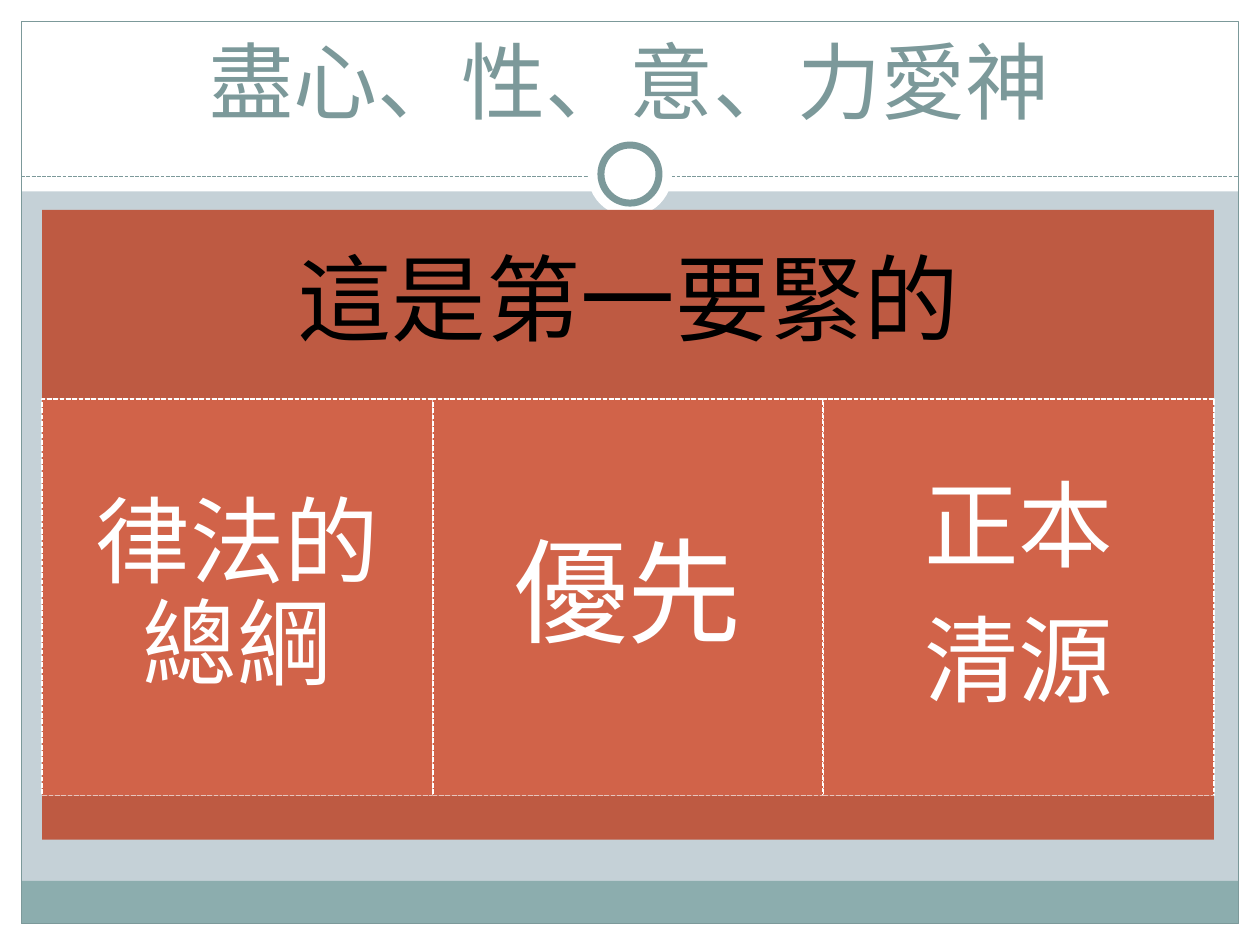
from pptx import Presentation
from pptx.dml.color import RGBColor
from pptx.enum.dml import MSO_LINE
from pptx.enum.shapes import MSO_CONNECTOR, MSO_SHAPE
from pptx.enum.text import MSO_ANCHOR, PP_ALIGN
from pptx.oxml.ns import qn
from pptx.util import Cm, Pt
from lxml.etree import SubElement

WHITE = RGBColor(0xFF, 0xFF, 0xFF)
BLACK = RGBColor(0x00, 0x00, 0x00)
MIST = RGBColor(0xC5, 0xD1, 0xD7)
TEAL = RGBColor(0x8C, 0xAD, 0xAE)
SLATE = RGBColor(0x7C, 0x99, 0x9A)
RUST = RGBColor(0xBE, 0x5A, 0x42)
CORAL = RGBColor(0xD1, 0x63, 0x49)

FONT = "Roboto"
WIDTH, HEIGHT = 25.4, 19.05
MARGIN = 0.43
COLUMNS = [(["律法的總綱"], 54), (["優先"], 65), (["正本", "清源"], 54)]


def set_line(line, color, width, dash=None):
    """Style an outline or connector line."""
    line.color.rgb = color
    line.width = Pt(width)
    if dash:
        line.dash_style = dash


def add_block(page, box, fill=None, kind=MSO_SHAPE.RECTANGLE, outline=None):
    """Add a preset shape with an optional fill and outline."""
    block = page.shapes.add_shape(kind, *map(Cm, box))
    block.shadow.inherit = False
    if fill is None:
        block.fill.background()
    else:
        block.fill.solid()
        block.fill.fore_color.rgb = fill
    if outline:
        set_line(block.line, *outline)
    else:
        block.line.fill.background()
    return block


def write(shape, lines, size, color, inset, anchor, spacing=1.0, after=0.0):
    """Write centred paragraphs into a shape."""
    frame = shape.text_frame
    frame_format = {"word_wrap": True, "vertical_anchor": anchor}
    frame_format.update({f"margin_{side}": Cm(inset) for side in ("left", "top", "right", "bottom")})
    for name, value in frame_format.items():
        setattr(frame, name, value)
    for index, text in enumerate(lines):
        para = frame.add_paragraph() if index else frame.paragraphs[0]
        para_format = {"alignment": PP_ALIGN.CENTER, "line_spacing": spacing,
                       "space_after": Pt(size * after)}
        for name, value in para_format.items():
            setattr(para, name, value)
        span = para.add_run()
        span.text = text
        for name, value in {"name": FONT, "size": Pt(size)}.items():
            setattr(span.font, name, value)
        span.font.color.rgb = color


def add_frame(page, left, top, width, height):
    """Draw the white border, footer band, divider and ring."""
    right, bottom = left + width, top + height
    edge, band = MARGIN, 0.86
    inner = width - 2 * edge
    divider, center = top + 3.56, left + width / 2
    add_block(page, (left, bottom - edge, width, edge), WHITE)
    add_block(page, (left, top, width, 3.86), WHITE)
    for side in (left, right - edge):
        add_block(page, (side, top, edge, height), WHITE)
    add_block(page, (left + edge, bottom - edge - band, inner, band), TEAL)
    add_block(page, (left + edge, top + edge, inner, height - 2 * edge), outline=(SLATE, 0.75))
    rule = page.shapes.add_connector(
        MSO_CONNECTOR.STRAIGHT, Cm(left + edge), Cm(divider), Cm(right - edge), Cm(divider))
    set_line(rule.line, SLATE, 0.75, MSO_LINE.SQUARE_DOT)
    SubElement(rule._element.spPr, qn("a:effectLst"))
    for size, outline in ((1.7, None), (1.17, (SLATE, 4))):
        box = (center - size / 2, divider - 0.05 - size / 2, size, size)
        add_block(page, box, WHITE, MSO_SHAPE.OVAL, outline)


def add_title(page, left, top, width, height):
    """Add the slide heading."""
    title = page.shapes.add_textbox(*map(Cm, (left, top, width, height)))
    write(title, ["盡心、性、意、力愛神"], 48, SLATE, 0.13, MSO_ANCHOR.BOTTOM)


def add_panel(page, left, top, width, height):
    """Stack the header, three equal columns and the base strip."""
    head, base = 3.81, 0.89
    body = height - head - base
    column = width / len(COLUMNS)
    style = {"anchor": MSO_ANCHOR.MIDDLE, "spacing": 0.9, "after": 0.35}
    header = add_block(page, (left, top, width, head), RUST)
    write(header, ["這是第一要緊的"], 54, BLACK, 0.58, **style)
    for index, (lines, size) in enumerate(COLUMNS):
        box = (left + index * column, top + head, column, body)
        cell = add_block(page, box, CORAL, outline=(WHITE, 0.9, MSO_LINE.SQUARE_DOT))
        write(cell, lines, size, WHITE, size * 0.0107, **style)
    add_block(page, (left, top + height - base, width, base), RUST)


def main():
    """Build and save the deck."""
    deck = Presentation()
    deck.slide_width, deck.slide_height = Cm(WIDTH), Cm(HEIGHT)
    page = deck.slides.add_slide(deck.slide_layouts[6])
    page.background.fill.solid()
    page.background.fill.fore_color.rgb = MIST
    add_frame(page, 0, 0, WIDTH, HEIGHT)
    add_title(page, 0.85, 0.64, 23.7, 2.11)
    add_panel(page, 0.85, 4.23, 23.62, 12.7)
    deck.save("out.pptx")


if __name__ == "__main__":
    main()
